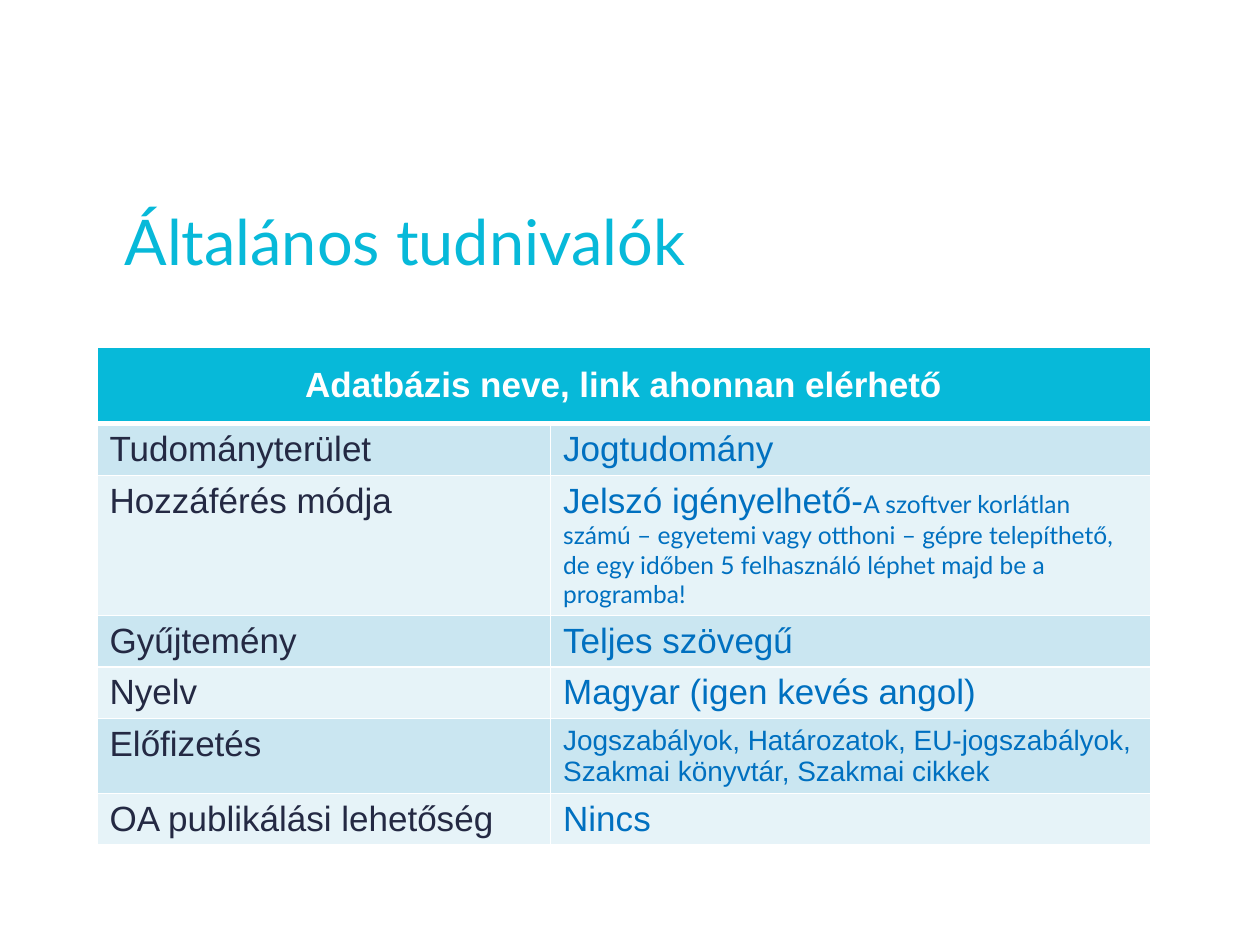
from dataclasses import dataclass

import pptx
import pptx.dml.color
import pptx.enum.text
import pptx.oxml
import pptx.oxml.ns
import pptx.util


@dataclass(frozen=True)
class Theme:
    accent: str = "07B9D9"
    label: str = "242943"
    value: str = "0070C0"
    white: str = "FFFFFF"
    bands: tuple[str, str] = ("CAE6F1", "E6F3F8")
    body_font: str = "Arial"
    accent_font: str = "Lato"
    title_size: int = 36
    body_size: int = 20
    list_size: int = 16
    note_size: int = 14
    thin_line: int = 1
    thick_line: int = 3


THEME = Theme()


@dataclass(frozen=True)
class TextRun:
    text: str
    color: str = THEME.value
    size: int = THEME.body_size
    font: str = THEME.body_font
    bold: bool = False


@dataclass(frozen=True)
class Fact:
    label: str
    value: tuple[TextRun, ...]
    height: float = 0.41


WIDTH, HEIGHT = 10, 7.5
HEADER_HEIGHT = 0.61
COLUMN_SHARES = (0.36, 0.476)

FACTS = (
    Fact("Tudományterület", (TextRun("Jogtudomány"),)),
    Fact("Hozzáférés módja", (
        TextRun("Jelszó igényelhető-"),
        TextRun("A szoftver korlátlan számú – egyetemi vagy otthoni – gépre "
                "telepíthető, de egy időben 5 felhasználó léphet majd be a programba!",
                size=THEME.note_size, font=THEME.accent_font),
    ), 1.11),
    Fact("Gyűjtemény", (TextRun("Teljes szövegű"),)),
    Fact("Nyelv", (TextRun("Magyar (igen kevés angol)"),)),
    Fact("Előfizetés", (
        TextRun("Jogszabályok, Határozatok, EU-jogszabályok, "
                "Szakmai könyvtár, Szakmai cikkek", size=THEME.list_size),
    ), 0.59),
    Fact("OA publikálási lehetőség", (TextRun("Nincs"),)),
)


def across(share: float) -> int:
    return pptx.util.Inches(WIDTH * share)


def down(share: float) -> int:
    return pptx.util.Inches(HEIGHT * share)


def rgb(color: str) -> pptx.dml.color.RGBColor:
    return pptx.dml.color.RGBColor.from_string(color)


def add_runs(paragraph, runs: tuple[TextRun, ...]) -> None:
    for item in runs:
        run = paragraph.add_run()
        run.text = item.text
        run.font.name = item.font
        run.font.size = pptx.util.Pt(item.size)
        run.font.bold = item.bold
        run.font.color.rgb = rgb(item.color)


def set_borders(cell, top: int, bottom: int) -> None:
    properties = cell._tc.get_or_add_tcPr()
    widths = {"lnL": THEME.thin_line, "lnR": THEME.thin_line, "lnT": top, "lnB": bottom}
    for position, (side, width) in enumerate(widths.items()):
        line = pptx.oxml.parse_xml(
            f'<a:{side} {pptx.oxml.ns.nsdecls("a")} w="{pptx.util.Pt(width)}">'
            f'<a:solidFill><a:srgbClr val="{THEME.white}"/></a:solidFill></a:{side}>')
        properties.insert(position, line)


def fill_cell(cell, runs: tuple[TextRun, ...], fill: str,
              top: int = THEME.thin_line, bottom: int = THEME.thin_line) -> None:
    cell.fill.solid()
    cell.fill.fore_color.rgb = rgb(fill)
    set_borders(cell, top, bottom)
    add_runs(cell.text_frame.paragraphs[0], runs)


def add_title(slide, text: str) -> None:
    box = slide.shapes.add_textbox(across(0.089), down(0.217), across(0.614), down(0.08))
    box.text_frame.word_wrap = True
    paragraph = box.text_frame.paragraphs[0]
    paragraph.line_spacing = 0.9
    add_runs(paragraph, (TextRun(text, THEME.accent, THEME.title_size, THEME.accent_font),))


def add_fact_table(slide, heading: str, facts: tuple[Fact, ...]) -> None:
    heights = [HEADER_HEIGHT] + [fact.height for fact in facts]
    table = slide.shapes.add_table(
        len(heights), len(COLUMN_SHARES), across(0.077), down(0.367),
        across(sum(COLUMN_SHARES)), down(sum(heights) / HEIGHT)).table
    for column, share in zip(table.columns, COLUMN_SHARES):
        column.width = across(share)
    for row, height in zip(table.rows, heights):
        row.height = down(height / HEIGHT)

    # Header across both columns
    header = table.cell(0, 0)
    header.merge(table.cell(0, 1))
    fill_cell(header, (TextRun(heading, THEME.white, bold=True),),
              THEME.accent, bottom=THEME.thick_line)
    fill_cell(table.cell(0, 1), (), THEME.accent, bottom=THEME.thick_line)
    header.vertical_anchor = pptx.enum.text.MSO_ANCHOR.MIDDLE
    header.text_frame.paragraphs[0].alignment = pptx.enum.text.PP_ALIGN.CENTER

    # Banded rows of label and value
    for index, fact in enumerate(facts):
        fill = THEME.bands[index % 2]
        top = THEME.thin_line if index else THEME.thick_line
        label = (TextRun(fact.label, THEME.label),)
        for column, runs in enumerate((label, fact.value)):
            fill_cell(table.cell(index + 1, column), runs, fill, top)


def main() -> None:
    presentation = pptx.Presentation()
    presentation.slide_width, presentation.slide_height = across(1), down(1)
    slide = presentation.slides.add_slide(presentation.slide_layouts[6])
    add_fact_table(slide, "Adatbázis neve, link ahonnan elérhető", FACTS)
    add_title(slide, "Általános tudnivalók")
    presentation.save("out.pptx")


if __name__ == "__main__":
    main()
